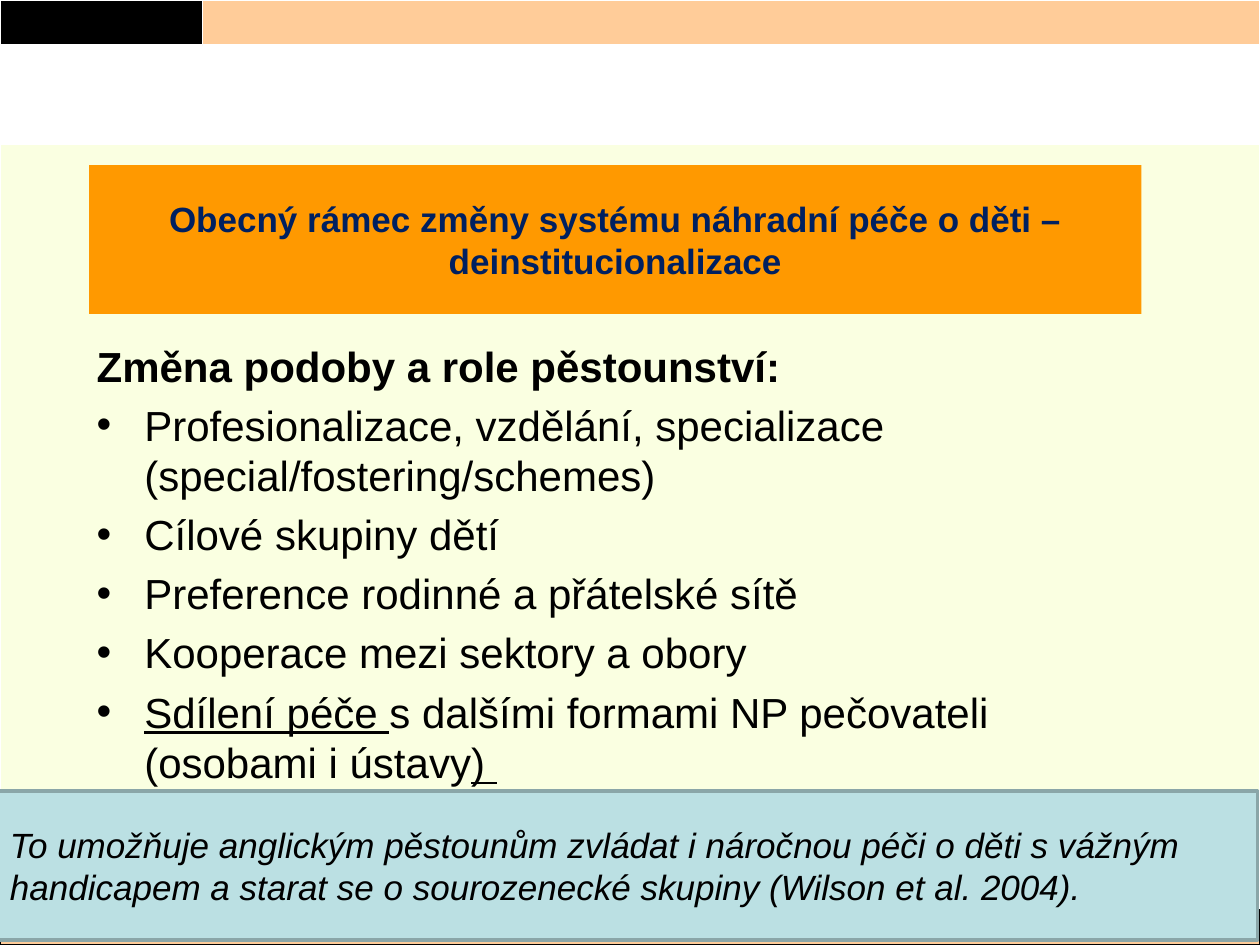
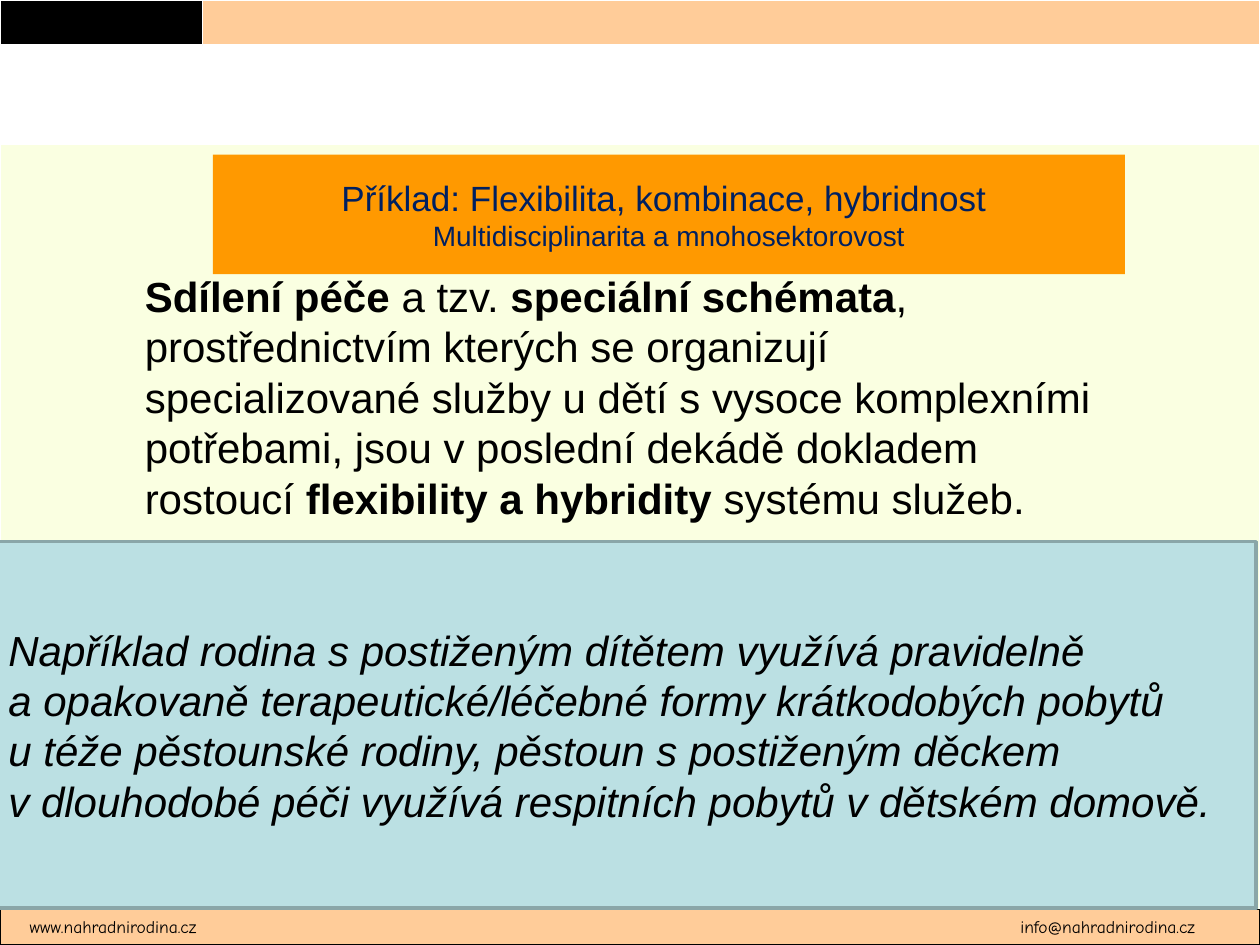
from dataclasses import dataclass

from lxml import etree
from pptx import Presentation
from pptx.dml.color import RGBColor
from pptx.enum.shapes import MSO_SHAPE
from pptx.enum.text import MSO_ANCHOR, PP_ALIGN
from pptx.oxml.ns import qn
from pptx.util import Cm, Pt

# Colours
WHITE = RGBColor(0xFF, 0xFF, 0xFF)
BLACK = RGBColor(0x00, 0x00, 0x00)
CREAM = RGBColor(0xFA, 0xFF, 0xE1)
PEACH = RGBColor(0xFF, 0xCC, 0x99)
ORANGE = RGBColor(0xFF, 0x99, 0x00)
NAVY = RGBColor(0x00, 0x20, 0x60)
PALE_BLUE = RGBColor(0xBB, 0xE0, 0xE3)
BLUE_GREY = RGBColor(0x8A, 0xA6, 0xA8)

RECTANGLE = MSO_SHAPE.RECTANGLE
LEFT, CENTER = PP_ALIGN.LEFT, PP_ALIGN.CENTER
TOP, MIDDLE = MSO_ANCHOR.TOP, MSO_ANCHOR.MIDDLE

PAGE_WIDTH, PAGE_HEIGHT = 25.4, 19.05
MAIN_FONT, FOOTER_FONT = "Arial", "Comic Neue"
INSET, FOOTER_INSET, FOOTER_TAB = 0.25, 0.6, 19.97
BULLET_INDENT = 0.96


@dataclass(frozen=True)
class Frame:
    left: float
    top: float
    width: float
    height: float

    def lengths(self) -> tuple:
        return Cm(self.left), Cm(self.top), Cm(self.width), Cm(self.height)


@dataclass(frozen=True)
class Span:
    text: str
    size: float = 24
    bold: bool = False
    italic: bool = False
    underline: bool = False
    color: RGBColor = BLACK
    font: str = MAIN_FONT


@dataclass(frozen=True)
class Paragraph:
    spans: list[Span]
    bullet: bool = False


@dataclass(frozen=True)
class Band:
    frame: Frame
    fill: RGBColor
    line: RGBColor


@dataclass(frozen=True)
class Content:
    title_frame: Frame
    title: list[Span]
    body_frame: Frame
    body: list[Paragraph]
    callout_frame: Frame
    callout: list[Span]
    shows_footer: bool


FOOTER_FRAME = Frame(0, 18.34, PAGE_WIDTH, 0.71)
BANDS = [
    Band(Frame(0, 2.92, PAGE_WIDTH, 16.13), CREAM, WHITE),
    Band(Frame(3.89, 0, 21.51, 0.91), PEACH, WHITE),
    Band(Frame(0, 0, 4.09, 0.91), BLACK, WHITE),
    Band(FOOTER_FRAME, PEACH, BLACK),
]
FOOTER = Span("www.nahradnirodina.cz\tinfo@nahradnirodina.cz", 10, font=FOOTER_FONT)


def bullet(*spans: Span) -> Paragraph:
    return Paragraph(list(spans), bullet=True)


PAGES = [
    Content(
        title_frame=Frame(1.8, 3.33, 21.21, 3),
        title=[Span("Obecný rámec změny systému náhradní péče o děti – "
                    "deinstitucionalizace", 20, bold=True, color=NAVY)],
        body_frame=Frame(1.7, 6.73, 22, 12.32),
        body=[
            Paragraph([Span("Změna podoby a role pěstounství:", bold=True)]),
            bullet(Span("Profesionalizace, vzdělání, specializace "
                        "(special/fostering/schemes)")),
            bullet(Span("Cílové skupiny dětí")),
            bullet(Span("Preference rodinné a přátelské sítě")),
            bullet(Span("Kooperace mezi sektory a obory")),
            bullet(Span("Sdílení péče ", underline=True),
                   Span("s dalšími formami NP pečovateli (osobami i ústavy"),
                   Span(") ", underline=True)),
        ],
        callout_frame=Frame(-0.05, 15.95, PAGE_WIDTH, 3),
        callout=[Span("To umožňuje anglickým pěstounům zvládat i náročnou péči o děti "
                      "s vážným handicapem a starat se o sourozenecké skupiny "
                      "(Wilson et al. 2004).", 20, italic=True)],
        shows_footer=False,
    ),
    Content(
        title_frame=Frame(4.29, 3.12, 18.39, 2.41),
        title=[Span("Příklad: Flexibilita, kombinace, hybridnost \n", 20, color=NAVY),
               Span("Multidisciplinarita a mnohosektorovost", 16, color=NAVY)],
        body_frame=Frame(2.67, 5.33, 19.99, 5.72),
        body=[Paragraph([
            Span("Sdílení péče ", bold=True),
            Span("a tzv. "),
            Span("speciální schémata", bold=True),
            Span(", prostřednictvím kterých se organizují specializované služby u dětí "
                 "s vysoce komplexními potřebami, jsou v poslední dekádě dokladem rostoucí "),
            Span("flexibility a hybridity ", bold=True),
            Span("systému služeb."),
        ])],
        callout_frame=Frame(-0.08, 10.92, PAGE_WIDTH, 7.39),
        callout=[Span("Například rodina s postiženým dítětem využívá pravidelně\n"
                      "a opakovaně terapeutické/léčebné formy krátkodobých pobytů\n"
                      "u téže pěstounské rodiny, pěstoun s postiženým děckem\n"
                      "v dlouhodobé péči využívá respitních pobytů v dětském domově.",
                      italic=True)],
        shows_footer=True,
    ),
]


def add_span(para, span: Span) -> None:
    for number, line in enumerate(span.text.split("\n")):
        if number:
            para.add_line_break()
        if not line:
            continue
        run = para.add_run()
        run.text = line
        font = run.font
        font.name, font.size = span.font, Pt(span.size)
        font.bold, font.italic, font.underline = span.bold, span.italic, span.underline
        font.color.rgb = span.color


def add_bullet(para) -> None:
    properties = para._p.get_or_add_pPr()
    properties.set("marL", str(Cm(BULLET_INDENT)))
    properties.set("indent", str(-Cm(BULLET_INDENT)))
    etree.SubElement(properties, qn("a:buFont")).set("typeface", MAIN_FONT)
    etree.SubElement(properties, qn("a:buChar")).set("char", "•")


def write_text(box, paragraphs: list[Paragraph], align=LEFT, anchor=TOP,
               inset: float = INSET) -> None:
    frame = box.text_frame
    frame.word_wrap = True
    frame.vertical_anchor = anchor
    frame.margin_left, frame.margin_right = Cm(inset), Cm(INSET)
    for number, paragraph in enumerate(paragraphs):
        para = frame.add_paragraph() if number else frame.paragraphs[0]
        para.alignment = align
        if number:
            para.space_before = Pt(5)
        if paragraph.bullet:
            add_bullet(para)
        for span in paragraph.spans:
            add_span(para, span)


def add_panel(page, frame: Frame, fill: RGBColor, line: RGBColor | None = None,
              line_width: float = 0.75):
    panel = page.shapes.add_shape(RECTANGLE, *frame.lengths())
    panel.shadow.inherit = False
    panel.fill.solid()
    panel.fill.fore_color.rgb = fill
    if line is None:
        panel.line.fill.background()
    else:
        panel.line.color.rgb = line
        panel.line.width = Pt(line_width)
    return panel


def add_footer(page) -> None:
    box = page.shapes.add_textbox(*FOOTER_FRAME.lengths())
    properties = box.text_frame.paragraphs[0]._p.get_or_add_pPr()
    tabs = etree.SubElement(properties, qn("a:tabLst"))
    tab = etree.SubElement(tabs, qn("a:tab"))
    tab.set("pos", str(Cm(FOOTER_TAB)))
    tab.set("algn", "l")
    write_text(box, [Paragraph([FOOTER])], inset=FOOTER_INSET)


def build_page(deck, content: Content) -> None:
    page = deck.slides.add_slide(deck.slide_layouts[6])
    # Shared background bands
    for band in BANDS:
        add_panel(page, band.frame, band.fill, band.line)
    # Body text and footer
    body = page.shapes.add_textbox(*content.body_frame.lengths())
    write_text(body, content.body)
    if content.shows_footer:
        add_footer(page)
    # Title and callout panels
    title = add_panel(page, content.title_frame, ORANGE)
    write_text(title, [Paragraph(content.title)], CENTER, MIDDLE)
    callout = add_panel(page, content.callout_frame, PALE_BLUE, BLUE_GREY, 2)
    write_text(callout, [Paragraph(content.callout)], LEFT, MIDDLE)


def main() -> None:
    deck = Presentation()
    deck.slide_width, deck.slide_height = Cm(PAGE_WIDTH), Cm(PAGE_HEIGHT)
    for content in PAGES:
        build_page(deck, content)
    deck.save("out.pptx")


if __name__ == "__main__":
    main()
